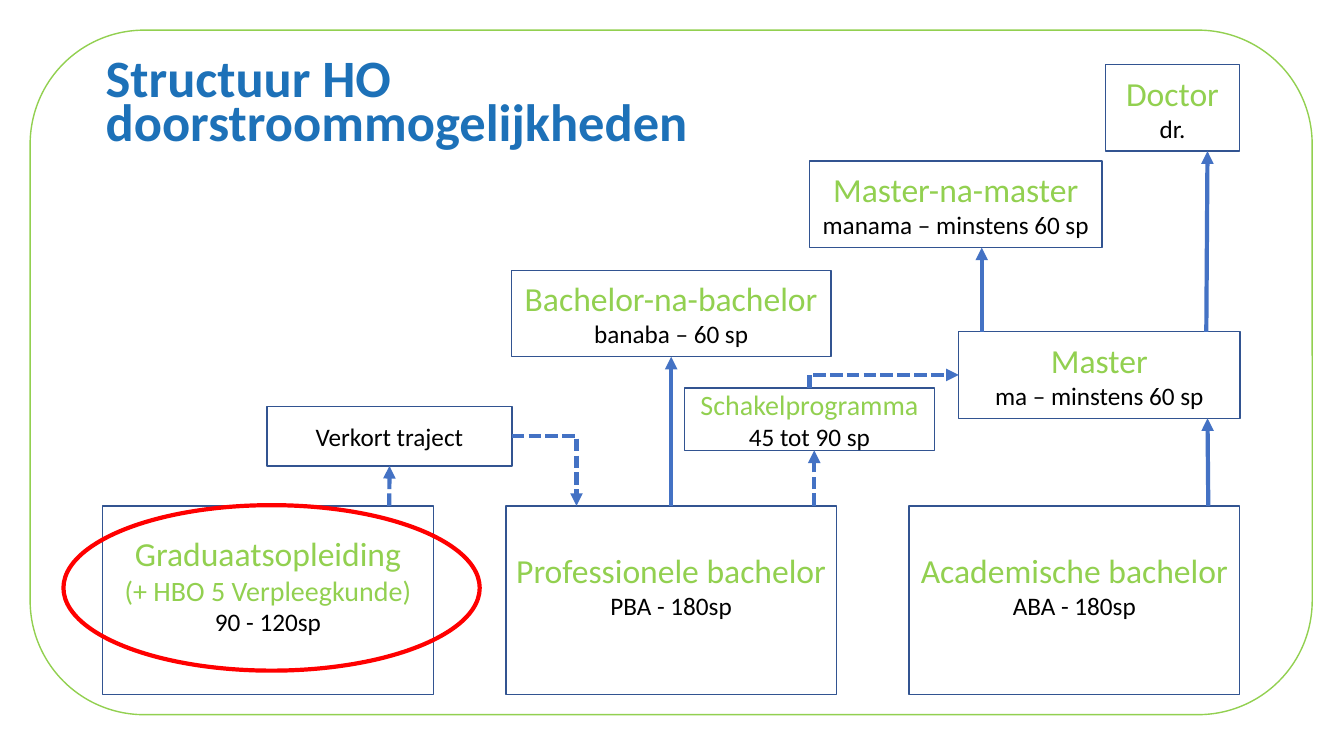
from lxml.etree import SubElement
from pptx import Presentation
from pptx.dml.color import RGBColor
from pptx.enum.dml import MSO_LINE
from pptx.enum.shapes import MSO_CONNECTOR as LINK, MSO_SHAPE as SHAPE
from pptx.enum.text import MSO_ANCHOR as ANCHOR, MSO_AUTO_SIZE as AUTO, PP_ALIGN as ALIGN
from pptx.oxml.ns import qn
from pptx.util import Cm, Pt

GREEN = RGBColor(0x92, 0xD0, 0x50)
NAVY = RGBColor(0x32, 0x54, 0x91)
BLUE = RGBColor(0x44, 0x72, 0xC4)
TITLE_BLUE = RGBColor(0x1D, 0x71, 0xB8)
RED = RGBColor(0xFF, 0, 0)
BLACK = RGBColor(0, 0, 0)
FONT = "Calibri"

TITLE = "Structuur HO doorstroommogelijkheden"

# Entry programmes, left to right: key, lines of (text, size, colour)
PROGRAMMES = [
    ("graduaat", [("Graduaatsopleiding", 24, GREEN),
                  ("(+ HBO 5 Verpleegkunde)", 20, GREEN),
                  ("90 - 120sp", 18, BLACK)]),
    ("pba", [("Professionele bachelor", 24, GREEN), ("PBA - 180sp", 18, BLACK)]),
    ("aba", [("Academische bachelor", 24, GREEN), ("ABA - 180sp", 18, BLACK)]),
]
PROGRAMME_LEFT, PROGRAMME_STEP = 2.59, 10.16
PROGRAMME_TOP, PROGRAMME_WIDTH, PROGRAMME_HEIGHT = 12.75, 8.33, 4.75

# Follow-up programmes: key, (left, top, width, height) in cm, lines
FOLLOW_UPS = [
    ("doctor", (27.86, 1.63, 3.38, 2.18),
     [("Doctor", 24, GREEN), ("dr.", 18, BLACK)]),
    ("master", (24.16, 8.36, 7.09, 2.18),
     [("Master", 24, GREEN), ("ma – minstens 60 sp", 18, BLACK)]),
    ("schakel", (17.25, 9.78, 6.3, 1.57),
     [("Schakelprogramma", 20, GREEN), ("45 tot 90 sp", 18, BLACK)]),
    ("manama", (20.4, 4.06, 7.37, 2.18),
     [("Master-na-master", 24, GREEN), ("manama – minstens 60 sp", 18, BLACK)]),
    ("banaba", (12.89, 6.81, 8.05, 2.18),
     [("Bachelor-na-bachelor", 24, GREEN), ("banaba – 60 sp", 18, BLACK)]),
    ("verkort", (6.73, 10.24, 6.17, 1.5), [("Verkort traject", 18, BLACK)]),
]

# Upward arrows: from, to, x at start, x at end (cm), dashed
# An x of None joins the arrow to the middle of that box's side
RISES = [
    ("aba", "master", 30.45, 30.43, False),
    ("master", "doctor", 30.4, 30.43, False),
    ("pba", "schakel", 20.52, 20.52, True),
    ("pba", "banaba", None, None, False),
    ("graduaat", "verkort", 9.81, None, True),
    ("master", "manama", 24.74, 24.74, False),
]
PBA_ENTRY_X = 14.53

deck = Presentation()
deck.slide_width, deck.slide_height = Cm(33.87), Cm(19.05)
page = deck.slides.add_slide(deck.slide_layouts[5])


def add_outline(kind, place, color, width):
    shape = page.shapes.add_shape(kind, *map(Cm, place))
    shape.shadow.inherit = False
    shape.fill.background()
    shape.line.color.rgb = color
    shape.line.width = Pt(width)
    return shape


def add_box(place, lines, bottom_margin=0.13):
    box = add_outline(SHAPE.RECTANGLE, place, NAVY, 1)
    frame = box.text_frame
    frame.word_wrap = True
    frame.vertical_anchor = ANCHOR.MIDDLE
    frame.margin_left = frame.margin_right = Cm(0.1)
    frame.margin_bottom = Cm(bottom_margin)
    for index, (text, size, color) in enumerate(lines):
        para = frame.add_paragraph() if index else frame.paragraphs[0]
        para.text = text
        para.alignment = ALIGN.CENTER
        para.font.name = FONT
        para.font.size = Pt(size)
        para.font.color.rgb = color
    return box


def add_arrow(kind, start, end, dashed):
    arrow = page.shapes.add_connector(kind, *start, *end)
    arrow.line.color.rgb = BLUE
    arrow.line.width = Pt(3)
    if dashed:
        arrow.line.dash_style = MSO_LINE.SQUARE_DOT
    properties = arrow._element.spPr
    SubElement(properties.find(qn("a:ln")), qn("a:tailEnd"), type="triangle")
    SubElement(properties, qn("a:effectLst"))
    if kind == LINK.ELBOW:
        properties.find(qn("a:prstGeom")).set("prst", "bentConnector2")
    return arrow


def turn_up_then_right(arrow):
    """Turn a one-bend connector so that it rises first and then runs right."""
    left, top, width, height = arrow.left, arrow.top, arrow.width, arrow.height
    arrow.left = left + (width - height) // 2
    arrow.top = top + (height - width) // 2
    arrow.width, arrow.height = height, width
    xfrm = arrow._element.spPr.find(qn("a:xfrm"))
    for name, value in (("rot", "5400000"), ("flipH", "1"), ("flipV", "1")):
        xfrm.set(name, value)


def middle_x(box):
    return box.left + box.width // 2


def middle_y(box):
    return box.top + box.height // 2


title = page.shapes.title
title.left, title.top, title.width, title.height = map(Cm, (2.41, 0.23, 16.48, 3.68))
title.text_frame.text = TITLE
title.text_frame.word_wrap = True
title.text_frame.auto_size = AUTO.NONE
title.text_frame.vertical_anchor = ANCHOR.BOTTOM
heading = title.text_frame.paragraphs[0]
heading.alignment = ALIGN.LEFT
heading.line_spacing = 0.7
heading.font.name = FONT
heading.font.size = Pt(37.5)
heading.font.bold = True
heading.font.color.rgb = TITLE_BLUE

add_outline(SHAPE.ROUNDED_RECTANGLE, (0.76, 0.76, 32.31, 17.25), GREEN, 1)

boxes = {}
for column, (key, lines) in enumerate(PROGRAMMES):
    place = (PROGRAMME_LEFT + column * PROGRAMME_STEP, PROGRAMME_TOP,
             PROGRAMME_WIDTH, PROGRAMME_HEIGHT)
    boxes[key] = add_box(place, lines, bottom_margin=0.9)
for key, place, lines in FOLLOW_UPS:
    boxes[key] = add_box(place, lines)

for source, target, start_x, end_x, dashed in RISES:
    lower, upper = boxes[source], boxes[target]
    start = (middle_x(lower) if start_x is None else Cm(start_x), lower.top)
    end = (middle_x(upper) if end_x is None else Cm(end_x), upper.top + upper.height)
    arrow = add_arrow(LINK.STRAIGHT, start, end, dashed)
    if start_x is None:
        arrow.begin_connect(lower, 0)
    if end_x is None:
        arrow.end_connect(upper, 2)

verkort, schakel, master = boxes["verkort"], boxes["schakel"], boxes["master"]
to_pba = add_arrow(LINK.ELBOW, (verkort.left + verkort.width, middle_y(verkort)),
                   (Cm(PBA_ENTRY_X), boxes["pba"].top), True)
to_pba.begin_connect(verkort, 3)
to_master = add_arrow(LINK.ELBOW, (middle_x(schakel), schakel.top),
                      (master.left, middle_y(master)), True)
to_master.begin_connect(schakel, 0)
to_master.end_connect(master, 1)
turn_up_then_right(to_master)

add_outline(SHAPE.OVAL, (1.6, 12.73, 10.49, 4.17), RED, 3)

deck.save("out.pptx")
